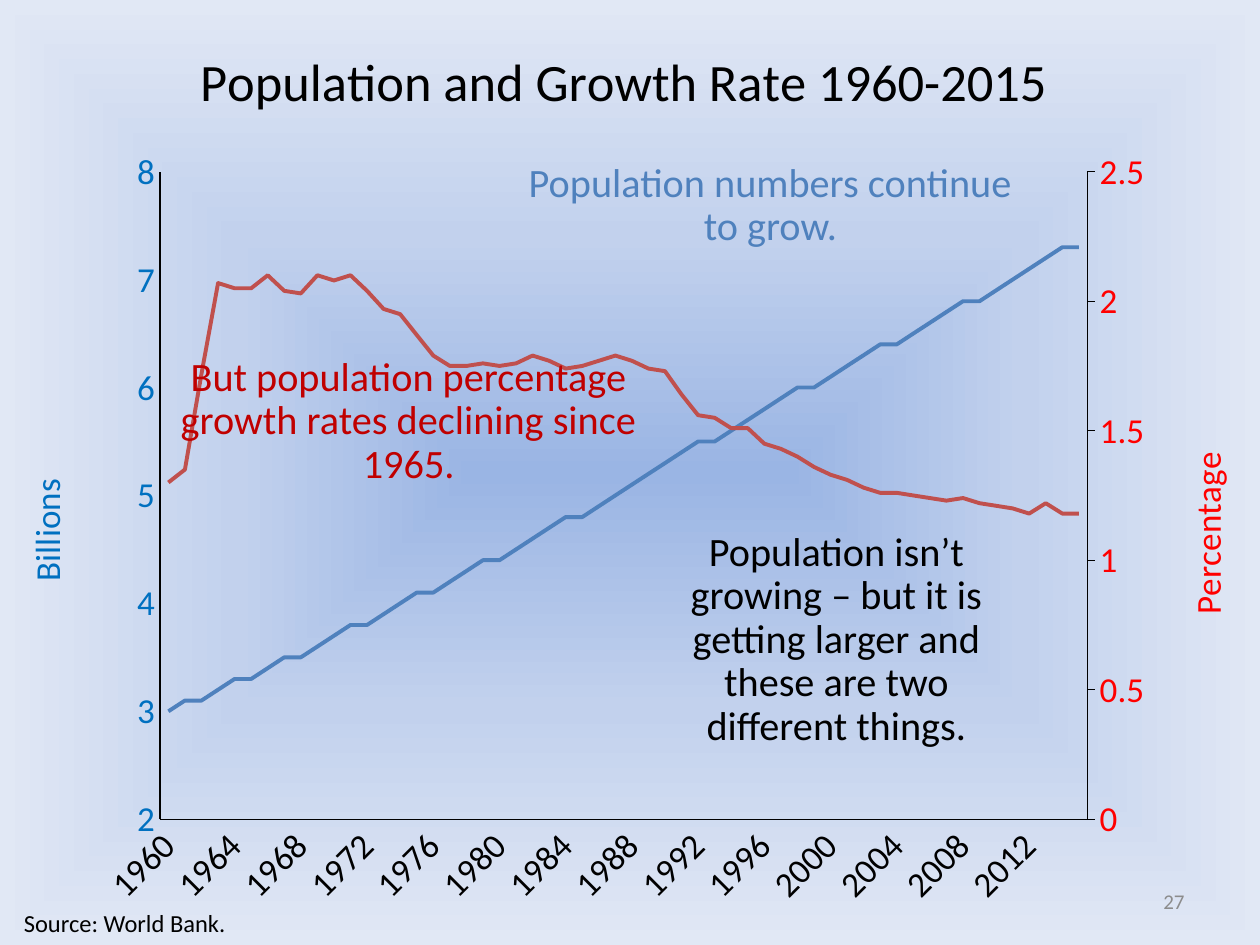
from copy import deepcopy
from dataclasses import dataclass

from lxml import etree
from pptx import Presentation, util as u
from pptx.chart import axis as axes
from pptx.chart.data import CategoryChartData
from pptx.dml.color import RGBColor
from pptx.enum import chart as charts, text
from pptx.oxml import parse_xml
from pptx.oxml.ns import nsdecls, qn


@dataclass(frozen=True)
class Theme:
    """Colours, type sizes and line widths of the slide."""
    font: str = "Calibri"
    ink: str = "000000"
    muted: str = "8C8C8C"
    billions: str = "0070C0"
    percentage: str = "FF0000"
    population: str = "4F81BD"
    growth: str = "C0504D"
    decline: str = "C00000"
    backdrop: tuple = ((0, "9AB5E4"), (50, "C2D1ED"), (100, "E1E8F5"))
    headline: int = 30
    remark: int = 23
    scale: int = 20
    source: int = 14
    number: int = 12
    axis_line: float = 0.75
    series_line: float = 2.25


THEME = Theme()
WIDTH, HEIGHT = u.Inches(10), u.Inches(7.5)
COLUMNS, ROWS = 100, 75
POPULATION = [
    3, 3.1, 3.1, 3.2, 3.3, 3.3, 3.4, 3.5, 3.5, 3.6, 3.7, 3.8, 3.8, 3.9,
    4, 4.1, 4.1, 4.2, 4.3, 4.4, 4.4, 4.5, 4.6, 4.7, 4.8, 4.8, 4.9, 5,
    5.1, 5.2, 5.3, 5.4, 5.5, 5.5, 5.6, 5.7, 5.8, 5.9, 6, 6, 6.1, 6.2,
    6.3, 6.4, 6.4, 6.5, 6.6, 6.7, 6.8, 6.8, 6.9, 7, 7.1, 7.2, 7.3, 7.3]
GROWTH = [
    1.3, 1.35, 1.72, 2.07, 2.05, 2.05, 2.1, 2.04, 2.03, 2.1, 2.08, 2.1, 2.04, 1.97,
    1.95, 1.87, 1.79, 1.75, 1.75, 1.76, 1.75, 1.76, 1.79, 1.77, 1.74, 1.75, 1.77, 1.79,
    1.77, 1.74, 1.73, 1.64, 1.56, 1.55, 1.51, 1.51, 1.45, 1.43, 1.4, 1.36, 1.33, 1.31,
    1.28, 1.26, 1.26, 1.25, 1.24, 1.23, 1.24, 1.22, 1.21, 1.2, 1.18, 1.22, 1.18, 1.18]


def place(column, row, columns, rows):
    """Turn a grid area into slide lengths."""
    across, down = WIDTH / COLUMNS, HEIGHT / ROWS
    return [round(n) for n in (column * across, row * down, columns * across, rows * down)]


def style(font, size, color):
    """Give a font the theme's typeface, a size and a colour."""
    font.name, font.size, font.bold = THEME.font, u.Pt(size), False
    font.color.rgb = RGBColor.from_string(color)


def write(frame, words, size=THEME.remark, color=THEME.ink,
          align=text.PP_ALIGN.CENTER, spacing=None):
    """Write one formatted paragraph into a text frame."""
    paragraph = frame.paragraphs[0]
    paragraph.alignment = align
    if spacing:
        paragraph.line_spacing = spacing
    run = paragraph.add_run()
    run.text = words
    style(run.font, size, color)


def add_note(slide, words, area, wrap=True, grow=True,
             anchor=text.MSO_ANCHOR.TOP, **look):
    """Add a text box over a grid area."""
    frame = slide.shapes.add_textbox(*place(*area)).text_frame
    frame.word_wrap, frame.vertical_anchor = wrap, anchor
    if grow:
        frame.auto_size = text.MSO_AUTO_SIZE.SHAPE_TO_FIT_TEXT
    write(frame, words, **look)


def paint_background(slide):
    """Fill the background with a gradient that spreads from the centre."""
    slide.background.fill.gradient()
    gradient = next(slide.element.iter(qn("a:gradFill")))
    stops = "".join(f'<a:gs pos="{share * 1000}"><a:srgbClr val="{color}"/></a:gs>'
                    for share, color in THEME.backdrop)
    gradient.getparent().replace(gradient, parse_xml(
        f'<a:gradFill {nsdecls("a")} rotWithShape="1"><a:gsLst>{stops}</a:gsLst>'
        '<a:path path="shape"><a:fillToRect l="50000" t="50000" r="50000" b="50000"/>'
        '</a:path></a:gradFill>'))


def pin(part, index, target=None, **percents):
    """Fix a chart part at percentages of the chart area."""
    for old in part.findall(qn("c:layout")):
        part.remove(old)
    layout = etree.Element(qn("c:layout"))
    manual = etree.SubElement(layout, qn("c:manualLayout"))
    values = {"layoutTarget": target} if target else {}
    values |= {"xMode": "edge", "yMode": "edge"}
    values |= {side: f"{share / 100:.3f}" for side, share in percents.items()}
    for name, value in values.items():
        etree.SubElement(manual, qn(f"c:{name}")).set("val", value)
    part.insert(index, layout)


def split_axes(area):
    """Move the last series to a second pair of axes and return its value axis."""
    originals = [area.find(qn(f"c:{tag}")) for tag in ("lineChart", "catAx", "valAx")]
    ids = {part.find(qn("c:axId")).get("val"): str(number)
           for number, part in enumerate(originals[1:], 50010)}
    copies = [deepcopy(part) for part in originals]
    for part in copies:
        for link in part.iter(qn("c:axId"), qn("c:crossAx")):
            link.set("val", ids[link.get("val")])
    plot, _, values = originals
    second_plot, second_years, second_values = copies
    plot.remove(plot.findall(qn("c:ser"))[-1])
    second_plot.remove(second_plot.find(qn("c:ser")))
    plot.addnext(second_plot)
    values.addnext(second_values)
    second_values.addnext(second_years)
    axes.CategoryAxis(second_years).visible = False
    second_values.find(qn("c:axPos")).set("val", "r")
    second_values.find(qn("c:crosses")).set("val", "max")
    return axes.ValueAxis(second_values)


def format_axis(axis, color, tick=charts.XL_TICK_MARK.NONE):
    """Set an axis line, its tick marks and its labels."""
    axis.has_major_gridlines = False
    axis.major_tick_mark, axis.minor_tick_mark = tick, charts.XL_TICK_MARK.NONE
    axis.format.line.color.rgb = RGBColor.from_string(THEME.ink)
    axis.format.line.width = u.Pt(THEME.axis_line)
    style(axis.tick_labels.font, THEME.scale, color)


def format_scale(axis, caption, color, low, high, step, number_format, x, y, **marks):
    """Set the range, number format and upright caption of a value axis."""
    format_axis(axis, color, **marks)
    axis.minimum_scale, axis.maximum_scale, axis.major_unit = low, high, step
    axis.tick_labels.number_format = number_format
    axis.tick_labels.number_format_is_linked = False
    write(axis.axis_title.text_frame, caption, size=THEME.scale, color=color)
    title = axis.axis_title._element
    body = next(title.iter(qn("a:bodyPr")))
    body.set("rot", "-5400000")
    body.set("vert", "horz")
    pin(title, 1, x=x, y=y)


def format_years(axis):
    """Show every fourth year on a slant."""
    format_axis(axis, THEME.ink)
    years = axis._element
    next(years.find(qn("c:txPr")).iter(qn("a:bodyPr"))).set("rot", "-2700000")
    skip = etree.Element(qn("c:tickLblSkip"))
    skip.set("val", "4")
    years.find(qn("c:noMultiLvlLbl")).addprevious(skip)


def add_trends(slide):
    """Add the line chart of population and growth on two scales."""
    data = CategoryChartData()
    data.categories = [str(year) for year in range(1960, 2016)]
    data.add_series("Series 1", POPULATION)
    data.add_series("Series 2", GROWTH)
    chart = slide.shapes.add_chart(
        charts.XL_CHART_TYPE.LINE, *place(-0.8, 0.8, 100.8, 72.5), data).chart
    chart.has_legend = False
    style(chart.font, THEME.scale, THEME.ink)
    write(chart.chart_title.text_frame, "Population and Growth Rate 1960-2015",
          size=THEME.headline)
    pin(chart.chart_title._element, 1, x=15.8, y=2.8)
    for series, color in zip(chart.plots[0].series, (THEME.population, THEME.growth)):
        series.smooth = False
        series.format.line.color.rgb = RGBColor.from_string(color)
        series.format.line.width = u.Pt(THEME.series_line)
    area = chart._chartSpace.chart.plotArea
    billions = chart.value_axis
    percentages = split_axes(area)
    format_years(chart.category_axis)
    format_scale(billions, "Billions", THEME.billions, 2, 8, 1, "#,##0", 2, 50.6)
    format_scale(percentages, "Percentage", THEME.percentage, 0, 2.5, 0.5, "General",
                 93.4, 47.7, tick=charts.XL_TICK_MARK.OUTSIDE)
    pin(area, 0, "inner", x=13.4, y=17.7, w=73, h=70.9)


def main():
    """Build the slide and save it."""
    deck = Presentation()
    deck.slide_width, deck.slide_height = WIDTH, HEIGHT
    slide = deck.slides.add_slide(deck.slide_layouts[6])
    paint_background(slide)
    add_trends(slide)
    add_note(slide, "But population percentage growth rates declining since 1965.",
             (13.3, 27.8, 38.3, 11.5), color=THEME.decline, spacing=0.9)
    add_note(slide, "Population numbers continue to grow.",
             (40.3, 12.4, 41.7, 8), color=THEME.population, spacing=0.9)
    add_note(slide, "Source: World Bank.", (0.8, 71.6, 18.2, 3.4),
             wrap=False, size=THEME.source)
    add_note(slide, "27", (71.7, 69.5, 23.3, 4), grow=False, size=THEME.number,
             anchor=text.MSO_ANCHOR.MIDDLE, color=THEME.muted, align=text.PP_ALIGN.RIGHT)
    add_note(slide, "Population isn’t growing – but it is getting larger and "
             "these are two different things.", (50.8, 41.7, 31.2, 18.4), spacing=0.9)
    deck.save("out.pptx")


if __name__ == "__main__":
    main()
